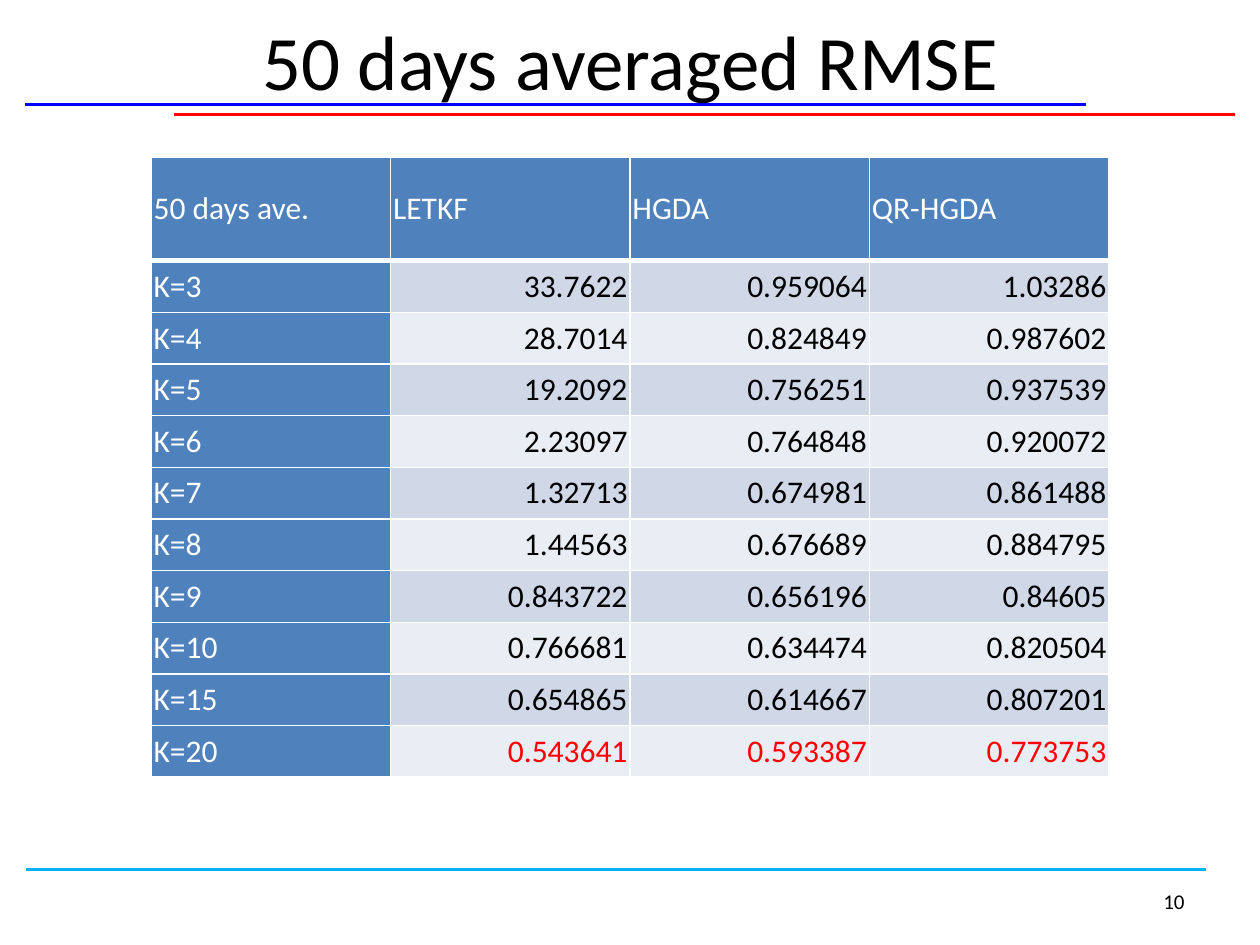
import dataclasses

import pptx
import pptx.dml.color
import pptx.enum.shapes
import pptx.enum.text
import pptx.oxml.ns
import pptx.util
from lxml import etree

Inches = pptx.util.Inches
Pt = pptx.util.Pt
Align = pptx.enum.text.PP_ALIGN
Anchor = pptx.enum.text.MSO_ANCHOR
qn = pptx.oxml.ns.qn


@dataclasses.dataclass(frozen=True)
class Theme:
    font: str = "Calibri"
    black: str = "000000"
    white: str = "FFFFFF"
    head: str = "4F81BD"
    bands: tuple = ("D0D8E8", "E9EDF4")
    red: str = "FF0000"
    blue: str = "0000FF"
    sky: str = "00B0F0"
    title: int = 44
    body: int = 18
    page: int = 12


THEME = Theme()

HEADS = ("50 days ave.", "LETKF", "HGDA", "QR-HGDA")
SCORES = (
    ("K=3", "33.7622", "0.959064", "1.03286"),
    ("K=4", "28.7014", "0.824849", "0.987602"),
    ("K=5", "19.2092", "0.756251", "0.937539"),
    ("K=6", "2.23097", "0.764848", "0.920072"),
    ("K=7", "1.32713", "0.674981", "0.861488"),
    ("K=8", "1.44563", "0.676689", "0.884795"),
    ("K=9", "0.843722", "0.656196", "0.84605"),
    ("K=10", "0.766681", "0.634474", "0.820504"),
    ("K=15", "0.654865", "0.614667", "0.807201"),
    ("K=20", "0.543641", "0.593387", "0.773753"),
)


def color(code):
    return pptx.dml.color.RGBColor.from_string(code)


def write(frame, text, size, tint, align):
    para = frame.paragraphs[0]
    para.alignment = align
    run = para.add_run()
    run.text = text
    run.font.name = THEME.font
    run.font.size = Pt(size)
    run.font.bold = False
    run.font.color.rgb = color(tint)


def add_text(slide, box, text, size, align, anchor):
    frame = slide.shapes.add_textbox(*map(Inches, box)).text_frame
    frame.word_wrap = True
    frame.vertical_anchor = anchor
    write(frame, text, size, THEME.black, align)


def add_rule(slide, left, right, top, tint):
    rule = slide.shapes.add_connector(
        pptx.enum.shapes.MSO_CONNECTOR.STRAIGHT,
        Inches(left), Inches(top), Inches(right), Inches(top),
    )
    rule.line.color.rgb = color(tint)
    rule.line.width = Pt(2)
    etree.SubElement(rule._element.spPr, qn("a:effectLst"))


def add_edges(cell, base):
    props = cell._tc.get_or_add_tcPr()
    for side, width in (("L", 1), ("R", 1), ("T", 1), ("B", base)):
        edge = etree.SubElement(props, qn("a:ln" + side), w=str(Pt(width)))
        fill = etree.SubElement(edge, qn("a:solidFill"))
        etree.SubElement(fill, qn("a:srgbClr"), val=THEME.white)


def fill_cell(cell, text, back, tint, align, base):
    add_edges(cell, base)
    cell.fill.solid()
    cell.fill.fore_color.rgb = color(back)
    cell.margin_left = cell.margin_right = Inches(0.02)
    cell.margin_top = cell.margin_bottom = 0
    cell.vertical_anchor = Anchor.MIDDLE
    write(cell.text_frame, text, THEME.body, tint, align)


def add_scores(slide):
    rows = (HEADS,) + SCORES
    last = len(SCORES)
    table = slide.shapes.add_table(
        len(rows), len(HEADS),
        Inches(1.2), Inches(1.25), Inches(7.6), Inches(4.92),
    ).table
    table.first_col = True
    for column in table.columns:
        column.width = Inches(1.9)
    for r, row in enumerate(rows):
        table.rows[r].height = Inches(0.41 if r else 0.82)
        for c, text in enumerate(row):
            if r == 0 or c == 0:
                look = THEME.head, THEME.white, Align.LEFT
            else:
                tint = THEME.red if r == last else THEME.black
                look = THEME.bands[(r - 1) % 2], tint, Align.RIGHT
            fill_cell(table.cell(r, c), text, *look, 1 if r else 3)


def main():
    deck = pptx.Presentation()
    deck.slide_width = Inches(10)
    deck.slide_height = Inches(7.5)
    slide = deck.slides.add_slide(deck.slide_layouts[6])
    add_rule(slide, 0.21, 9.57, 6.9, THEME.sky)
    add_rule(slide, 0.2, 8.62, 0.83, THEME.blue)
    add_rule(slide, 1.38, 9.8, 0.91, THEME.red)
    add_text(slide, (7.17, 6.95, 2.33, 0.4), "10",
             THEME.page, Align.RIGHT, Anchor.MIDDLE)
    add_scores(slide)
    add_text(slide, (0.2, 0.06, 9.61, 0.79), "50 days averaged RMSE",
             THEME.title, Align.CENTER, Anchor.TOP)
    deck.save("out.pptx")


if __name__ == "__main__":
    main()
